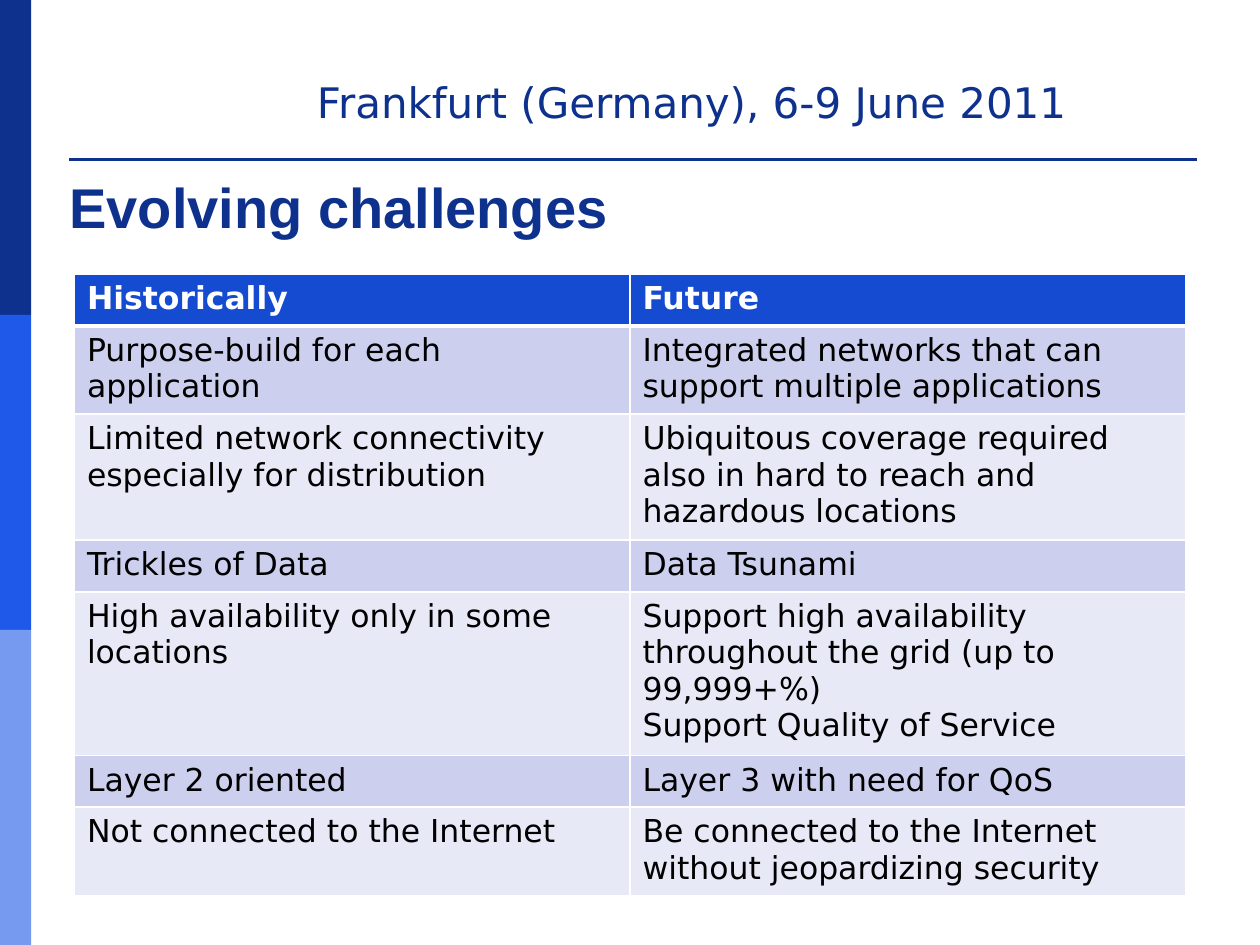
"""Build the slide comparing historical and future network challenges."""
from lxml import etree
from pptx import Presentation
from pptx.dml.color import RGBColor
from pptx.enum import shapes, text
from pptx.oxml import ns
from pptx.util import Cm, Pt

COLOURS = {
    "navy": "0E318D", "blue": "1F59E9", "sky": "779AF1", "header": "154BD1",
    "band": "CCD0EE", "pale": "E8E9F7", "white": "FFFFFF", "black": "000000",
}
ROWS = [
    ("Historically", "Future"),
    ("Purpose-build for each application",
     "Integrated networks that can support multiple applications"),
    ("Limited network connectivity especially for distribution",
     "Ubiquitous coverage required also in hard to reach and hazardous locations"),
    ("Trickles of Data", "Data Tsunami"),
    ("High availability only in some locations",
     "Support high availability throughout the grid (up to 99,999+%)\n"
     "Support Quality of Service"),
    ("Layer 2 oriented", "Layer 3 with need for QoS"),
    ("Not connected to the Internet",
     "Be connected to the Internet without jeopardizing security"),
]


def write(frame, content, font, size, colour, bold=False):
    """Fill a text frame with one paragraph per line of content."""
    frame.word_wrap = True
    for index, line in enumerate(content.split("\n")):
        paragraph = frame.add_paragraph() if index else frame.paragraphs[0]
        run = paragraph.add_run()
        run.text = line
        run.font.name = font
        run.font.size = Pt(size)
        run.font.bold = bold
        run.font.color.rgb = RGBColor.from_string(COLOURS[colour])


def add_border(cell, side, width, colour):
    """Draw one edge of a table cell."""
    properties = cell._tc.get_or_add_tcPr()
    line = etree.SubElement(properties, ns.qn(f"a:ln{side}"), w=str(Pt(width)))
    fill = etree.SubElement(line, ns.qn("a:solidFill"))
    etree.SubElement(fill, ns.qn("a:srgbClr"), val=COLOURS[colour])


presentation = Presentation()
presentation.slide_width, presentation.slide_height = Cm(25.4), Cm(19.05)
slide = presentation.slides.add_slide(presentation.slide_layouts[6])

for index, colour in enumerate(("navy", "blue", "sky")):
    stripe = slide.shapes.add_shape(
        shapes.MSO_SHAPE.RECTANGLE, 0, Cm(6.35 * index), Cm(0.63), Cm(6.35))
    stripe.shadow.inherit = False
    stripe.fill.solid()
    stripe.fill.fore_color.rgb = RGBColor.from_string(COLOURS[colour])
    stripe.line.fill.background()

rule = slide.shapes.add_table(1, 1, Cm(1.37), Cm(2.72), Cm(22.77), Cm(0.5)).table
rule.first_row = rule.horz_banding = False
rule_cell = rule.cell(0, 0)
rule_cell.margin_top = rule_cell.margin_bottom = 0
etree.SubElement(rule_cell.text_frame.paragraphs[0]._p, ns.qn("a:endParaRPr"), sz="600")
add_border(rule_cell, "B", 2.25, "navy")
rule_cell.fill.background()

event = slide.shapes.add_textbox(Cm(6.14), Cm(1.42), Cm(16.7), Cm(1.27))
write(event.text_frame, "Frankfurt (Germany), 6-9 June 2011", "DejaVu Sans", 24, "navy")

title = slide.shapes.add_textbox(Cm(1.15), Cm(3.33), Cm(22.86), Cm(1.65))
title.text_frame.vertical_anchor = text.MSO_ANCHOR.MIDDLE
write(title.text_frame, "Evolving challenges", "Arial", 32, "navy", True)

table = slide.shapes.add_table(
    len(ROWS), 2, Cm(1.5), Cm(5.53), Cm(22.4), Cm(1.04 * len(ROWS))).table
for row, contents in enumerate(ROWS):
    heading = row == 0
    fill = "header" if heading else ("pale", "band")[row % 2]
    for column, content in enumerate(contents):
        cell = table.cell(row, column)
        write(cell.text_frame, content, "DejaVu Sans", 18,
              "white" if heading else "black", heading)
        if heading:
            for side, width in (("L", 1), ("R", 1), ("T", 1), ("B", 3)):
                add_border(cell, side, width, "white")
        cell.fill.solid()
        cell.fill.fore_color.rgb = RGBColor.from_string(COLOURS[fill])

presentation.save("out.pptx")
